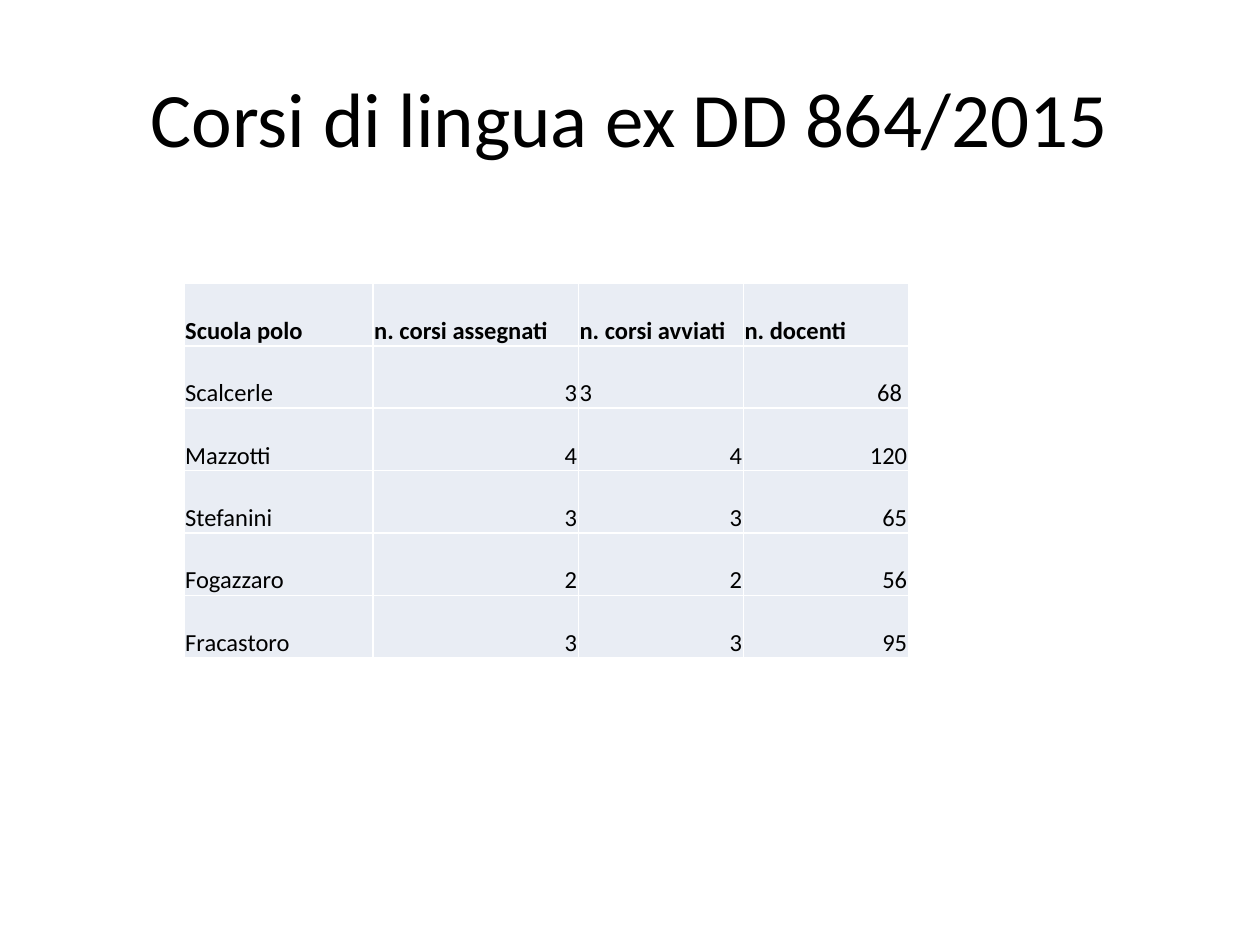
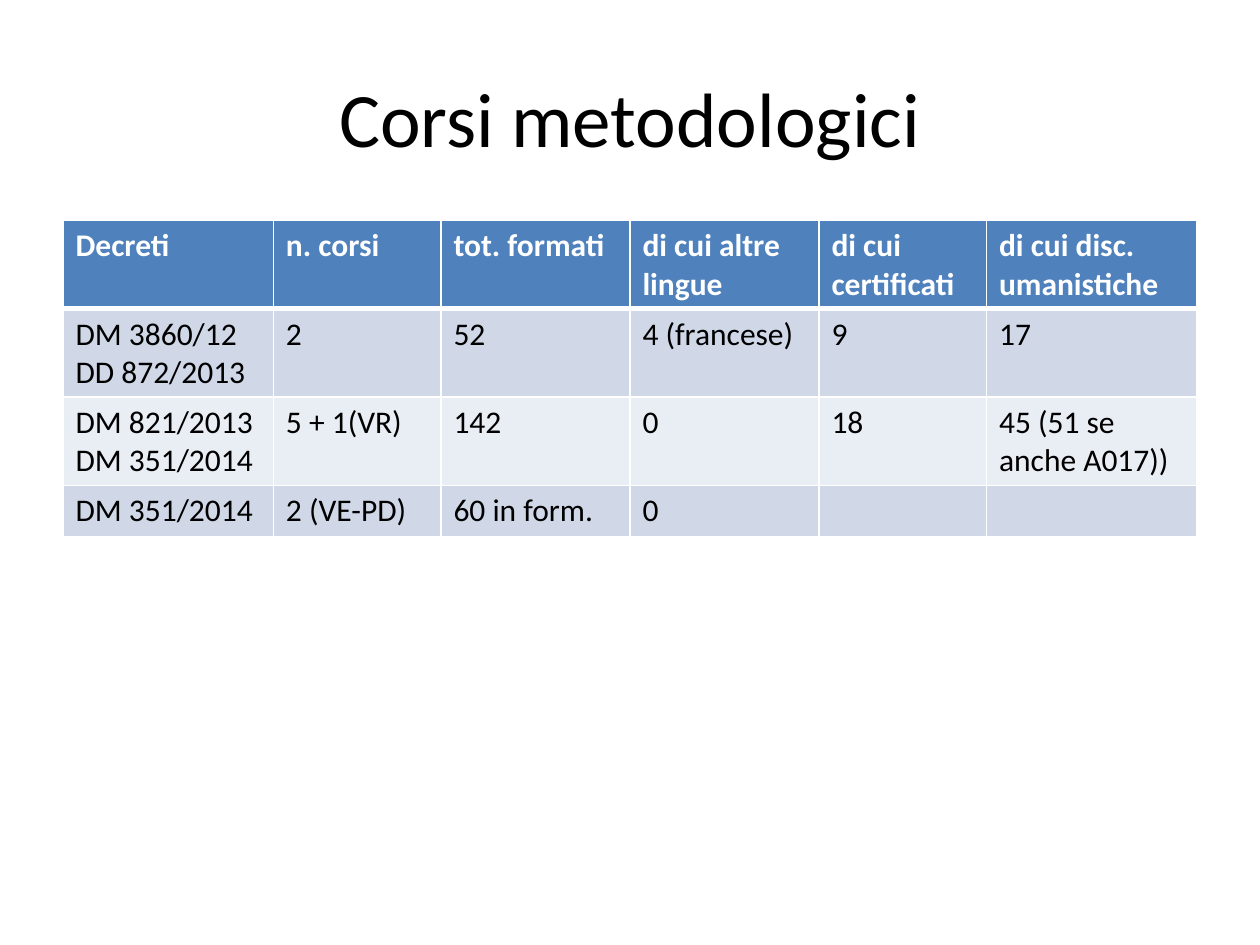
from pptx import Presentation
from pptx.util import Inches, Pt
from pptx.dml.color import RGBColor
from pptx.enum.text import MSO_ANCHOR, PP_ALIGN
from pptx.oxml.ns import qn
from lxml import etree

LEFT, RIGHT, CENTER = PP_ALIGN.LEFT, PP_ALIGN.RIGHT, PP_ALIGN.CENTER
TOP, MIDDLE, BOTTOM = MSO_ANCHOR.TOP, MSO_ANCHOR.MIDDLE, MSO_ANCHOR.BOTTOM

FONT = "Calibri"
COLORS = {
    "ink": "000000",
    "white": "FFFFFF",
    "head": "4F81BD",
    "dark": "D0D8E8",
    "light": "E9EDF4",
}
TITLE = (0.5, 0.3, 9, 1.25)

SCHOOLS = [
    ("Scuola polo", "n. corsi assegnati", "n. corsi avviati", "n. docenti"),
    ("Scalcerle", "3", "3", "68"),
    ("Mazzotti", "4", "4", "120"),
    ("Stefanini", "3", "3", "65"),
    ("Fogazzaro", "2", "2", "56"),
    ("Fracastoro", "3", "3", "95"),
]
DECREES = [
    ("Decreti", "n. corsi", "tot. formati", "di cui altre lingue",
     "di cui certificati", "di cui disc. umanistiche"),
    ("DM 3860/12\nDD 872/2013", "2", "52", "4 (francese)", "9", "17"),
    ("DM 821/2013\nDM 351/2014", "5 + 1(VR)", "142", "0", "18",
     "45 (51 se anche A017))"),
    ("DM 351/2014", "2 (VE-PD)", "60 in form.", "0", "", ""),
]


def color(name):
    return RGBColor.from_string(COLORS[name])


def write(frame, text, size, ink="ink", bold=False, align=LEFT):
    for i, line in enumerate(text.split("\n")):
        para = frame.add_paragraph() if i else frame.paragraphs[0]
        para.alignment = align
        if line:
            run = para.add_run()
            run.text = line
            run.font.name = FONT
            run.font.size = Pt(size)
            run.font.bold = bold
            run.font.color.rgb = color(ink)


def add_title(slide, box, text):
    frame = slide.shapes.add_textbox(*map(Inches, box)).text_frame
    frame.word_wrap = True
    frame.vertical_anchor = MIDDLE
    write(frame, text, 44, align=CENTER)


def add_edges(cell, top=1, bottom=1):
    props = cell._tc.get_or_add_tcPr()
    widths = {"L": 1, "R": 1, "T": top, "B": bottom}
    for i, (side, width) in enumerate(widths.items()):
        line = etree.Element(qn(f"a:ln{side}"), w=str(Pt(width)))
        fill = etree.SubElement(line, qn("a:solidFill"))
        etree.SubElement(fill, qn("a:srgbClr"), val=COLORS["white"])
        props.insert(i, line)


def add_grid(slide, box, rows, widths, height):
    shape = slide.shapes.add_table(len(rows), len(widths), *map(Inches, box))
    table = shape.table
    table.horz_banding = False
    for column, width in zip(table.columns, widths):
        column.width = Inches(width)
    for row in table.rows:
        row.height = Inches(height)
    return table


def fill_cell(cell, name):
    cell.fill.solid()
    cell.fill.fore_color.rgb = color(name)


def add_schools(slide, box):
    table = add_grid(slide, box, SCHOOLS, (1.5, 1.63, 1.31, 1.31),
                     box[3] / len(SCHOOLS))
    table.first_row = False
    for r, row in enumerate(SCHOOLS):
        for c, text in enumerate(row):
            cell = table.cell(r, c)
            fill_cell(cell, "light")
            add_edges(cell)
            cell.vertical_anchor = BOTTOM
            cell.margin_left = cell.margin_right = cell.margin_top = Inches(0.01)
            cell.margin_bottom = 0
            left = r == 0 or c == 0 or (r, c) == (1, 2)
            write(cell.text_frame, text, 14, bold=r == 0,
                  align=LEFT if left else RIGHT)
    table.cell(1, 3).margin_right = Inches(0.05)


def add_decrees(slide, box):
    table = add_grid(slide, box, DECREES, (1.67, 1.33, 1.5, 1.5, 1.33, 1.67), 0.41)
    for r, row in enumerate(DECREES):
        head = r == 0
        band = "head" if head else ("light", "dark")[r % 2]
        for c, text in enumerate(row):
            cell = table.cell(r, c)
            fill_cell(cell, band)
            add_edges(cell, top=3 if r == 1 else 1, bottom=3 if head else 1)
            cell.vertical_anchor = TOP
            write(cell.text_frame, text, 18, "white" if head else "ink", head)


def main():
    deck = Presentation()
    deck.slide_width, deck.slide_height = Inches(10), Inches(7.5)
    pages = [
        ("Corsi di lingua ex DD 864/2015", add_schools, (1.46, 2.25, 5.75, 2.97)),
        ("Corsi metodologici", add_decrees, (0.5, 1.75, 9, 2.51)),
    ]
    for title, build, box in pages:
        slide = deck.slides.add_slide(deck.slide_layouts[6])
        add_title(slide, TITLE, title)
        build(slide, box)
    deck.save("out.pptx")


if __name__ == "__main__":
    main()
